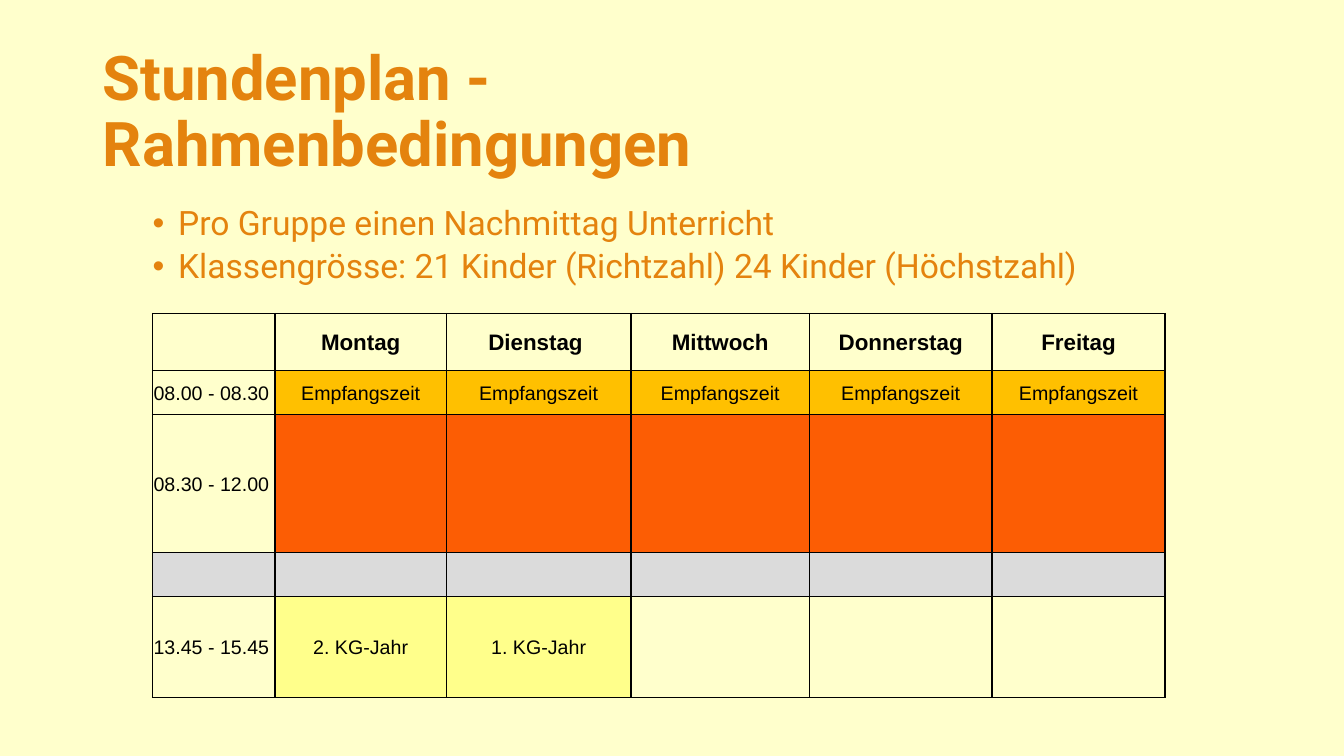
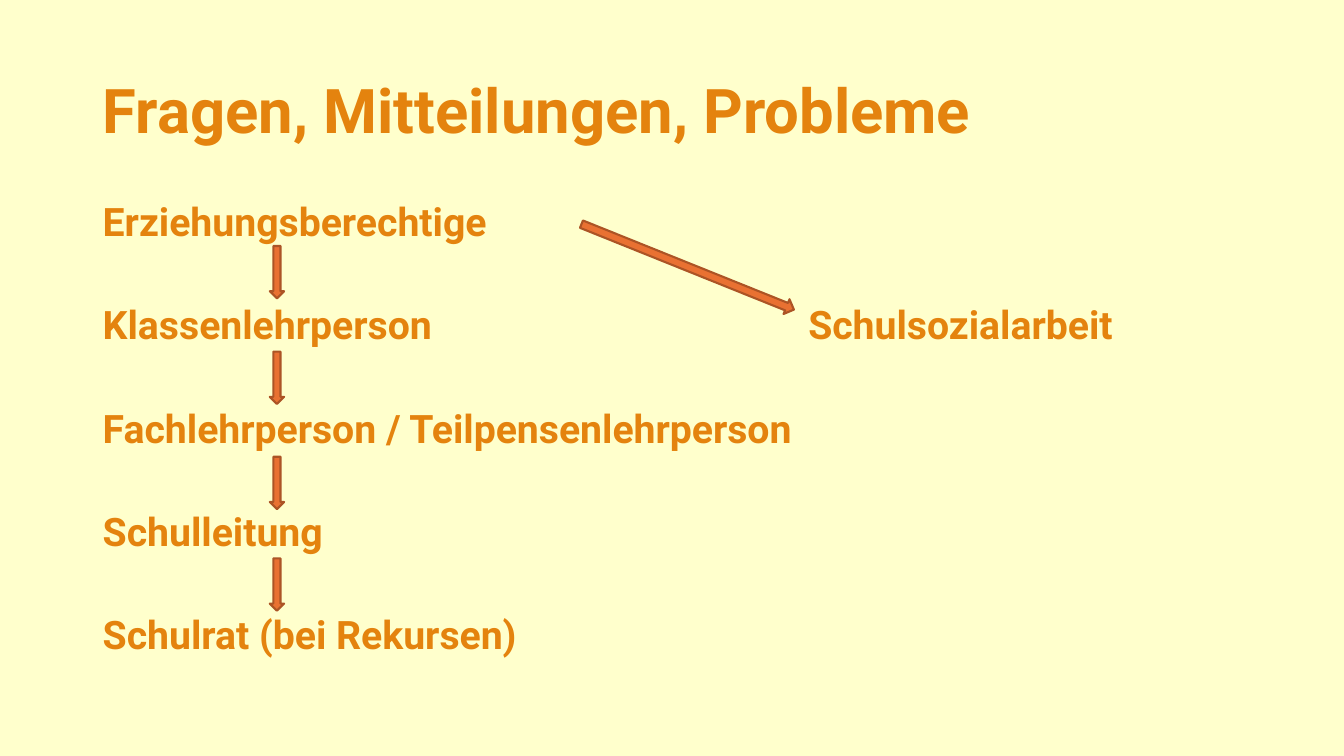
import pptx
import pptx.util
import pptx.dml.color
import pptx.enum.shapes
import pptx.enum.text
import pptx.oxml
import pptx.oxml.ns
from lxml import etree

Cm = pptx.util.Cm
Pt = pptx.util.Pt
ALIGN = pptx.enum.text.PP_ALIGN
MIDDLE = pptx.enum.text.MSO_ANCHOR.MIDDLE
DOWN = pptx.enum.shapes.MSO_SHAPE.DOWN_ARROW

COLORS = {
    "page": "FFFFCC", "text": "E4830E", "ink": "000000",
    "early": "FFC000", "class": "FC5D04", "noon": "DBDBDB", "late": "FFFF8B",
    "arrow": "E97132", "edge": "AC5425",
}

RULES = {
    "title": "Stundenplan - Rahmenbedingungen",
    "points": [
        "Pro Gruppe einen Nachmittag Unterricht",
        "Klassengrösse: 21 Kinder (Richtzahl) 24 Kinder (Höchstzahl)",
    ],
}
WIDTHS = [3.09, 4.32, 4.65, 4.5, 4.6, 4.36]
HEAD = 1
ROWS = [
    (0.74, [""] * 6, [None] * 6, "B"),
    (1.44, ["", "Montag", "Dienstag ", "Mittwoch", "Donnerstag", "Freitag"],
     [None] * 6, "LRTB"),
    (1.11, ["08.00 - 08.30"] + ["Empfangszeit"] * 5, [None] + ["early"] * 5, "LRTB"),
    (3.48, ["08.30 - 12.00"] + [""] * 5, [None] + ["class"] * 5, "LRTB"),
    (1.11, [""] * 6, ["noon"] * 6, "LRTB"),
    (2.54, ["13.45 - 15.45", "2. KG-Jahr", "1. KG-Jahr", "", "", ""],
     [None, "late", "late", None, None, None], "LRTB"),
    (0.71, [""] * 6, [None] * 6, "T"),
]

HELP = {
    "title": "Fragen, Mitteilungen, Probleme",
    "steps": [
        "Erziehungsberechtige",
        "Klassenlehrperson\tSchulsozialarbeit",
        "Fachlehrperson / Teilpensenlehrperson",
        "Schulleitung",
        "Schulrat (bei Rekursen)",
    ],
}
ARROWS = [(6.8, top, 0.36, 1.32, 0) for top in (6.2, 8.86, 11.51, 14.07)]
ARROWS.append((17.13, 3.84, 0.4, 5.77, 291.9))


def color(key):
    return pptx.dml.color.RGBColor.from_string(COLORS[key])


def add_tag(node, tag, **attrs):
    return etree.SubElement(node, pptx.oxml.ns.qn(tag), **attrs)


def write(frame, lines, size=24, font="Roboto", ink="text", bold=False,
          align=ALIGN.LEFT, pitch=0.9, gap=0, bullet=False, tab=None):
    frame.word_wrap = True
    for i, line in enumerate(lines):
        para = frame.paragraphs[0] if i == 0 else frame.add_paragraph()
        para.alignment = align
        para.line_spacing = pitch
        if i:
            para.space_before = Pt(gap)
        props = para._p.get_or_add_pPr()
        if bullet:
            props.set("marL", str(Cm(1.9)))
            props.set("indent", str(-Cm(0.64)))
            add_tag(props, "a:buFont", typeface="Arial")
            add_tag(props, "a:buChar", char="•")
        if tab:
            stops = add_tag(props, "a:tabLst")
            add_tag(stops, "a:tab", pos=str(Cm(tab)), algn="l")
        run = para.add_run()
        run.text = line
        run.font.name = font
        run.font.size = Pt(size)
        run.font.bold = bold
        run.font.color.rgb = color(ink)


def add_text(slide, place, lines, anchor=None, **style):
    frame = slide.shapes.add_textbox(*map(Cm, place)).text_frame
    if anchor is not None:
        frame.vertical_anchor = anchor
    write(frame, lines, **style)


def add_page(deck, title, lines, **style):
    slide = deck.slides.add_slide(deck.slide_layouts[6])
    add_text(slide, (2.34, 1.02, 25.2, 3.68), [title], anchor=MIDDLE, size=44, bold=True)
    add_text(slide, (2.34, 5.08, 29.21, 12.09), lines, **style)
    return slide


def frame_cell(cell, sides):
    props = cell._tc.get_or_add_tcPr()
    for side in "LRTB":
        line = add_tag(props, "a:ln" + side, w=str(Pt(1)))
        if side in sides:
            fill = add_tag(line, "a:solidFill")
            add_tag(fill, "a:srgbClr", val=COLORS["ink"])
        else:
            add_tag(line, "a:noFill")


def add_plan(slide):
    high = sum(row[0] for row in ROWS)
    place = map(Cm, (3.84, 7.16, sum(WIDTHS), high))
    table = slide.shapes.add_table(len(ROWS), len(WIDTHS), *place).table
    table.first_row = table.horz_banding = False
    for col, width in zip(table.columns, WIDTHS):
        col.width = Cm(width)
    for r, (height, words, fills, sides) in enumerate(ROWS):
        table.rows[r].height = Cm(height)
        for c, (word, fill) in enumerate(zip(words, fills)):
            cell = table.cell(r, c)
            cell.margin_left = cell.margin_right = cell.margin_top = Cm(0.03)
            cell.margin_bottom = 0
            cell.vertical_anchor = MIDDLE
            frame_cell(cell, sides)
            if fill:
                cell.fill.solid()
                cell.fill.fore_color.rgb = color(fill)
            else:
                cell.fill.background()
            if word:
                write(cell.text_frame, [word], font="Arial", ink="ink",
                      size=16 if r == HEAD else 14, bold=r == HEAD, pitch=1.0,
                      align=ALIGN.CENTER if c else ALIGN.LEFT)
            else:
                add_tag(cell.text_frame.paragraphs[0]._p, "a:endParaRPr", sz="1400")


def add_arrow(slide, left, top, width, height, turn):
    arrow = slide.shapes.add_shape(DOWN, Cm(left), Cm(top), Cm(width), Cm(height))
    arrow.rotation = turn
    arrow.shadow.inherit = False
    arrow.fill.solid()
    arrow.fill.fore_color.rgb = color("arrow")
    arrow.line.color.rgb = color("edge")
    arrow.line.width = Pt(1.5)


def main():
    deck = pptx.Presentation()
    deck.slide_width, deck.slide_height = Cm(33.87), Cm(19.05)
    back = deck.slide_master.background.fill
    back.solid()
    back.fore_color.rgb = color("page")

    add_plan(add_page(deck, RULES["title"], RULES["points"], gap=5, bullet=True))

    slide = add_page(deck, HELP["title"], HELP["steps"], size=28, bold=True,
                     pitch=0.8, gap=46.8, tab=17.78)
    for arrow in ARROWS:
        add_arrow(slide, *arrow)
    deck.save("out.pptx")


if __name__ == "__main__":
    main()
